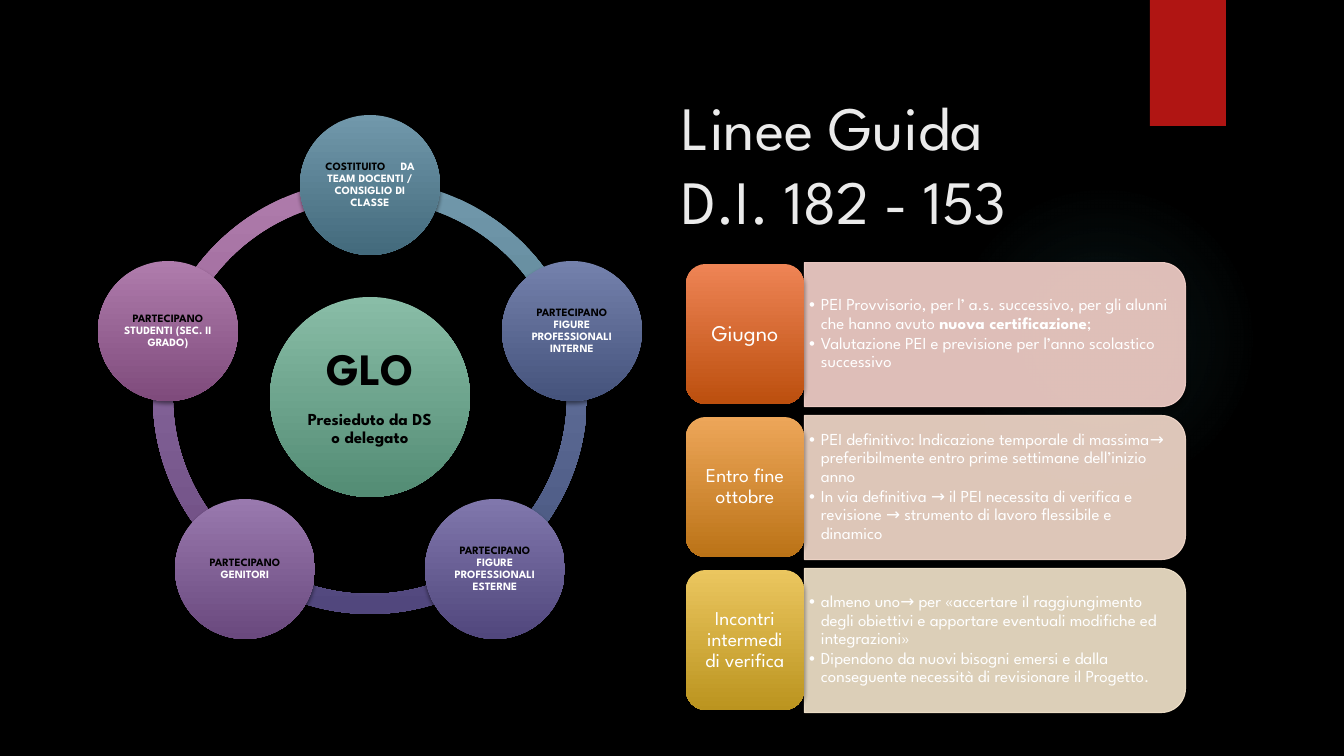
from math import cos, radians, sin

from lxml.etree import SubElement
from pptx import Presentation
from pptx.dml.color import RGBColor
from pptx.enum.shapes import MSO_SHAPE
from pptx.enum.text import MSO_ANCHOR, MSO_AUTO_SIZE, PP_ALIGN
from pptx.oxml import parse_xml
from pptx.oxml.ns import nsdecls, qn
from pptx.util import Emu, Pt

PX = 914400 / 100.8  # EMU in one px

THEME = {
    "font": "League Spartan",
    "background": "000000", "ribbon": "B01513", "glow": "50B9C1",
    "title": "EBEBEB", "dark": "000000", "light": "FFFFFF",
    "hub": ("89BDA7", "538C74"),
    "ring": [("7198AB", "436A7C"), ("7481AC", "45537C"), ("8077AC", "51477D"),
             ("9979AE", "6A497E"), ("AF7CAC", "7F4B7C")],
    "tiles": [("EE8455", "BC4F0E"), ("EDA659", "BB7317"), ("EBC65F", "BB941F")],
    "panels": ["F7D3CC", "F6DCCD", "F5E6CD"],
    "title_size": 44, "hub_size": 32, "body_size": 12, "node_size": 8, "small_size": 7,
    "tile_sizes": [16, 14, 14],
}


def draw(kind, box, fill, shadow=True):
    """Add a shape; a pair of colours gives a top-to-bottom gradient."""
    shape = slide.shapes.add_shape(kind, *[Emu(round(value * PX)) for value in box])
    if isinstance(fill, tuple):
        shape.fill.gradient()
        shape.fill.gradient_angle = 270
        for stop, color in zip(shape.fill.gradient_stops, fill):
            stop.color.rgb = RGBColor.from_string(color)
    else:
        shape.fill.solid()
        shape.fill.fore_color.rgb = RGBColor.from_string(fill)
    shape.line.fill.background()
    shape.shadow.inherit = False
    if shadow:
        effects = shape._element.spPr.find(qn("a:effectLst"))
        outer = SubElement(effects, qn("a:outerShdw"), blurRad="38100", dist="25400",
                           dir="5400000", rotWithShape="0")
        black = SubElement(outer, qn("a:prstClr"), val="black")
        SubElement(black, qn("a:alpha"), val="45000")
    return shape


def write(shape, paragraphs, size, color, bold=False, align=PP_ALIGN.CENTER, bullet=False,
          anchor=MSO_ANCHOR.MIDDLE, spacing=0.9, after=0.35, inset=(1, 1)):
    """Fill a shape with paragraphs, each a list of (text, run format)."""
    frame = shape.text_frame
    frame.word_wrap = True
    frame.auto_size = MSO_AUTO_SIZE.NONE
    frame.vertical_anchor = anchor
    frame.margin_left = frame.margin_right = Emu(round(inset[0] * PX))
    frame.margin_top = frame.margin_bottom = Emu(round(inset[1] * PX))
    for index, runs in enumerate(paragraphs):
        paragraph = frame.add_paragraph() if index else frame.paragraphs[0]
        if bullet:
            paragraph.level = 1
            properties = paragraph._p.get_or_add_pPr()
            properties.set("marL", str(round(12 * PX)))
            properties.set("indent", str(round(-12 * PX)))
            SubElement(properties, qn("a:buChar"), char="•")
        paragraph.alignment = align
        paragraph.line_spacing = spacing
        paragraph.space_before = Pt(0)
        paragraph.space_after = Pt(after * runs[0][1].get("size", size))
        for text, style in runs:
            run = paragraph.add_run()
            run.text = text
            run.font.name = THEME["font"]
            run.font.size = Pt(style.get("size", size))
            run.font.bold = style.get("bold", bold)
            run.font.color.rgb = RGBColor.from_string(style.get("color", color))
            if "tracking" in style:
                run.font._element.set("spc", str(style["tracking"]))


presentation = Presentation()
presentation.slide_width = Emu(round(1344 * PX))
presentation.slide_height = Emu(round(756 * PX))
slide = presentation.slides.add_slide(presentation.slide_layouts.get_by_name("Comparison"))
slide.background.fill.solid()
slide.background.fill.fore_color.rgb = RGBColor.from_string(THEME["background"])
title, *bodies, spare = slide.placeholders
spare._element.getparent().remove(spare._element)

# Background glow and ribbon
glow = draw(MSO_SHAPE.OVAL, (949, 184, 310, 310), THEME["glow"], shadow=False)
stops = "".join(
    f'<a:gs pos="{position}000"><a:srgbClr val="{THEME["glow"]}">'
    f'<a:alpha val="{alpha}000"/></a:srgbClr></a:gs>'
    for position, alpha in [(0, 7), (36, 6), (69, 0)])
glow_properties = glow._element.spPr
glow_properties.replace(glow_properties.find(qn("a:solidFill")), parse_xml(
    f'<a:gradFill {nsdecls("a")}><a:gsLst>{stops}</a:gsLst><a:path path="circle">'
    '<a:fillToRect l="50000" t="50000" r="50000" b="50000"/></a:path></a:gradFill>'))
draw(MSO_SHAPE.RECTANGLE, (1150, 0, 76, 126), THEME["ribbon"])

# Title
title.left, title.top, title.width, title.height = [
    Emu(round(value * PX)) for value in (672, 84, 437, 207)]
write(title, [[("Linee Guida", {})], [("D.I. 182 - 153", {})]], THEME["title_size"],
      THEME["title"], align=PP_ALIGN.LEFT, anchor=MSO_ANCHOR.TOP, spacing=1.0, after=0,
      inset=(10, 5))

# Ring of arcs, each starting at its node
CENTER_X, CENTER_Y, ORBIT, NODE, STEP = 370, 397, 212, 140, 72
angles = [(270 + STEP * index) % 360 for index in range(5)]
for angle, colors in reversed(list(zip(angles, THEME["ring"]))):
    arc = draw(MSO_SHAPE.BLOCK_ARC, (CENTER_X - 217, CENTER_Y - 217, 434, 434), colors)
    arc.adjustments[0] = angle * 0.6
    arc.adjustments[1] = (angle + STEP) % 360 * 0.6
    arc.adjustments[2] = 0.046

# Hub
hub = draw(MSO_SHAPE.OVAL, (CENTER_X - 100, CENTER_Y - 100, 200, 200), THEME["hub"])
write(hub, [[("GLO", {"size": THEME["hub_size"]})], [("Presieduto da DS o delegato", {})]],
      THEME["body_size"], THEME["dark"], bold=True, inset=(4, 4))

# Nodes: dark lead word, then light text
light = {"color": THEME["light"]}
nodes = [
    [("COSTITUITO", {}), (" ", {"tracking": 860}),
     ("DA TEAM DOCENTI / CONSIGLIO DI CLASSE", light)],
    [("PARTECIPANO ", {}), ("FIGURE PROFESSIONALI INTERNE", light)],
    [("PARTECIPANO ", {}), ("FIGURE PROFESSIONALI", light),
     (" ", {"size": THEME["small_size"]}), ("ESTERNE", light)],
    [("PARTECIPANO", {}), (" GENITORI", light)],
    [("PARTECIPANO ", {}), ("STUDENTI (SEC. II GRADO)", light)],
]
for angle, colors, runs in zip(angles, THEME["ring"], nodes):
    left = round(CENTER_X + ORBIT * cos(radians(angle)) - NODE / 2)
    top = round(CENTER_Y + ORBIT * sin(radians(angle)) - NODE / 2)
    node = draw(MSO_SHAPE.OVAL, (left, top, NODE, NODE), colors)
    write(node, [runs], THEME["node_size"], THEME["dark"], bold=True)

# Deadlines: rounded panel, bullet list and heading tile per row
deadlines = [
    ("Giugno", [
        [("PEI Provvisorio, per l’ a.s. successivo, per gli alunni che hanno avuto ", {}),
         ("nuova certificazione", {"bold": True}), (";", {})],
        [("Valutazione PEI e previsione per l’anno scolastico successivo", {})]]),
    ("Entro fine ottobre", [
        [("PEI definitivo: Indicazione temporale di massima→ preferibilmente entro prime "
          "settimane dell’inizio anno", {})],
        [("In via definitiva → il PEI necessita di verifica e revisione → strumento di "
          "lavoro flessibile e dinamico", {})]]),
    ("Incontri intermedi di verifica", [
        [("almeno uno→ per «accertare il raggiungimento degli obiettivi e apportare "
          "eventuali modifiche ed integrazioni»", {})],
        [("Dipendono da nuovi bisogni emersi e dalla conseguente necessità di revisionare "
          "il Progetto.", {})]]),
]
for row, ((heading, items), body) in enumerate(zip(deadlines, bodies)):
    middle = 334 + 153 * row
    panel = draw(MSO_SHAPE.ROUND_2_SAME_RECTANGLE, (923, middle - 190, 144, 381),
                 THEME["panels"][row])
    panel.rotation = 90
    panel.line.color.rgb = RGBColor.from_string(THEME["panels"][row])
    panel.line.width = Pt(0.75)
    for color in panel._element.spPr.iter(qn("a:srgbClr")):
        SubElement(color, qn("a:alpha"), val="90000")

    body.left, body.top, body.width, body.height = [
        Emu(round(value * PX)) for value in (804, middle - 65, 374, 130)]
    body._element.getparent().append(body._element)  # in front of the panel
    write(body, items, THEME["body_size"], THEME["light"], align=PP_ALIGN.LEFT,
          bullet=True, after=0.15, inset=(5, 3))

    tile = draw(MSO_SHAPE.ROUNDED_RECTANGLE, (686, middle - 70, 118, 140),
                THEME["tiles"][row])
    write(tile, [[(heading, {})]], THEME["tile_sizes"][row], THEME["light"], inset=(6, 3))

presentation.save("out.pptx")
